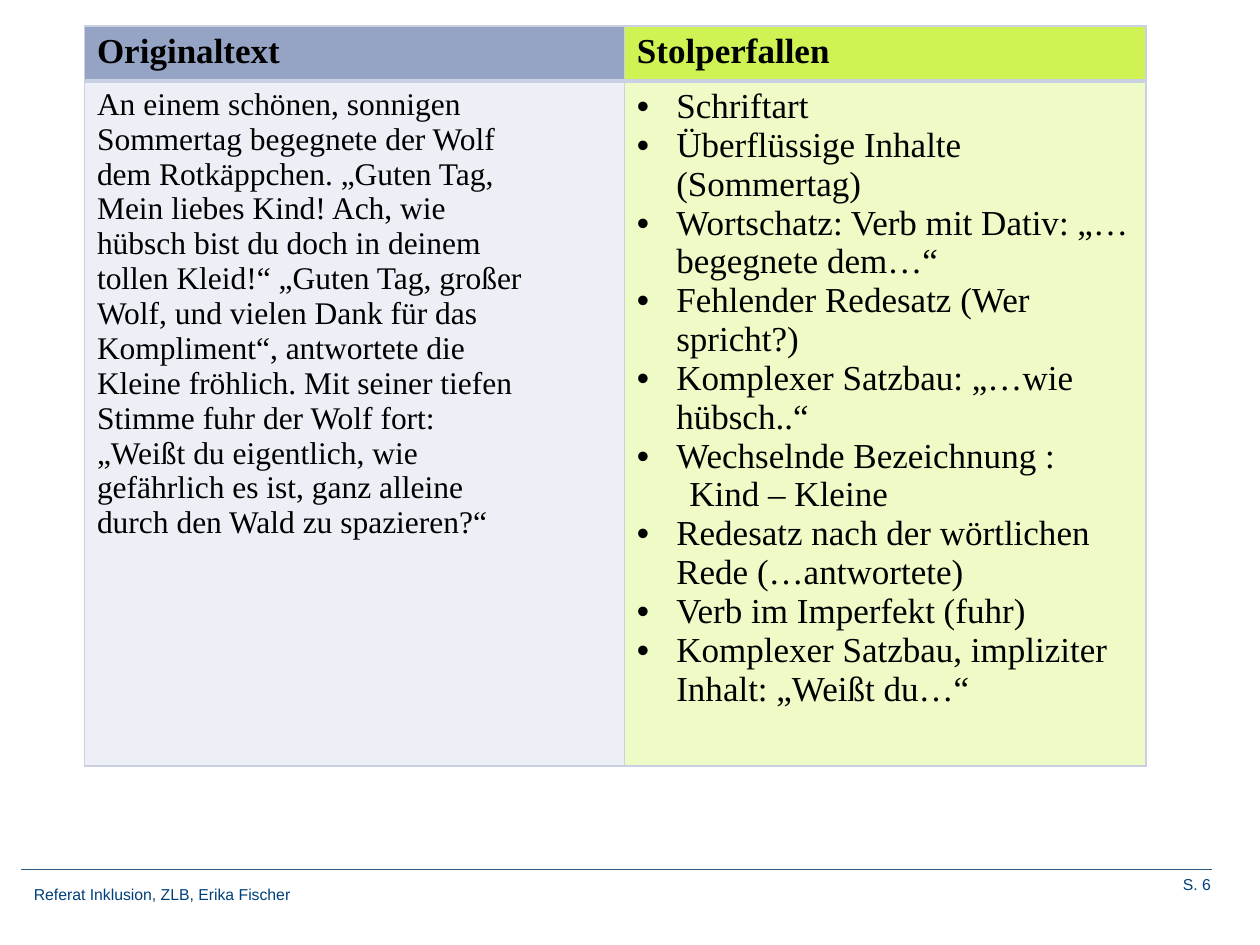
from pptx import Presentation
from pptx.dml.color import RGBColor
from pptx.enum.shapes import MSO_CONNECTOR
from pptx.enum.text import PP_ALIGN
from pptx.oxml.ns import qn
from pptx.util import Pt
from lxml.etree import SubElement, Element

BLACK = RGBColor(0x00, 0x00, 0x00)
FOOTER_BLUE = RGBColor(0x00, 0x40, 0x7A)
RULE_BLUE = RGBColor(0x2C, 0x58, 0x84)
BORDER = RGBColor(0xC8, 0xD0, 0xE2)
HEAD_BLUE = RGBColor(0x95, 0xA3, 0xC5)
HEAD_GREEN = RGBColor(0xCF, 0xF3, 0x53)
BODY_BLUE = RGBColor(0xEC, 0xEF, 0xF5)
BODY_GREEN = RGBColor(0xEF, 0xFB, 0xC6)

STORY = [
    "An einem schönen, sonnigen",
    "Sommertag begegnete der Wolf",
    "dem Rotkäppchen. „Guten Tag,",
    "Mein liebes Kind! Ach, wie",
    "hübsch bist du doch in deinem",
    "tollen Kleid!“ „Guten Tag, großer",
    "Wolf, und vielen Dank für das",
    "Kompliment“, antwortete die",
    "Kleine fröhlich. Mit seiner tiefen",
    "Stimme fuhr der Wolf fort:",
    "„Weißt du eigentlich, wie",
    "gefährlich es ist, ganz alleine",
    "durch den Wald zu spazieren?“",
]
EXAMPLE = "Kind – Kleine"
PITFALLS = [
    "Schriftart",
    "Überflüssige Inhalte (Sommertag)",
    "Wortschatz: Verb mit Dativ: „… begegnete dem…“",
    "Fehlender Redesatz (Wer spricht?)",
    "Komplexer Satzbau: „…wie hübsch..“",
    "Wechselnde Bezeichnung :",
    EXAMPLE,
    "Redesatz nach der wörtlichen Rede (…antwortete)",
    "Verb im Imperfekt (fuhr)",
    "Komplexer Satzbau, impliziter Inhalt: „Weißt du…“",
]
COLUMNS = [
    {"width": 308.5, "head": "Originaltext", "head_fill": HEAD_BLUE,
     "lines": STORY, "fill": BODY_BLUE, "size": 18, "bullets": False},
    {"width": 298.25, "head": "Stolperfallen", "head_fill": HEAD_GREEN,
     "lines": PITFALLS, "fill": BODY_GREEN, "size": 20, "bullets": True},
]
ROW_HEIGHTS = [31, 389]
TABLE_LEFT, TABLE_TOP = 48.25, 15
BULLET_INDENT, EXAMPLE_INDENT = 22.5, 30
FOOTERS = [
    ("Referat Inklusion, ZLB, Erika Fischer", (12.25, 502, 529, 18), PP_ALIGN.LEFT),
    ("S. 6", (615, 496.5, 84, 24), PP_ALIGN.RIGHT),
]


def indent(para, left, bullet=None):
    properties = para._p.get_or_add_pPr()
    properties.set("marL", str(Pt(left)))
    properties.set("indent", str(Pt(-left) if bullet else 0))
    if bullet:
        SubElement(properties, qn("a:buFont"), typeface="Arial")
        SubElement(properties, qn("a:buChar"), char=bullet)


def write(frame, lines, size, color=BLACK, font="Times New Roman", bold=False,
          align=PP_ALIGN.LEFT, bullets=False):
    frame.word_wrap = True
    for number, line in enumerate(lines):
        para = frame.add_paragraph() if number else frame.paragraphs[0]
        para.alignment = align
        if line == EXAMPLE:
            indent(para, EXAMPLE_INDENT)
        elif bullets:
            indent(para, BULLET_INDENT, "•")
        span = para.add_run()
        span.text = line
        span.font.name = font
        span.font.size = Pt(size)
        span.font.bold = bold
        span.font.color.rgb = color


def set_borders(cell, top=1, bottom=1):
    properties = cell._tc.get_or_add_tcPr()
    sides = [("lnL", 1), ("lnR", 1), ("lnT", top), ("lnB", bottom)]
    for position, (side, width) in enumerate(sides):
        line = Element(qn(f"a:{side}"), w=str(Pt(width)))
        fill = SubElement(line, qn("a:solidFill"))
        SubElement(fill, qn("a:srgbClr"), val=str(BORDER))
        properties.insert(position, line)


def fill_cell(cell, color):
    cell.fill.solid()
    cell.fill.fore_color.rgb = color


def add_comparison(slide):
    width = sum(column["width"] for column in COLUMNS)
    table = slide.shapes.add_table(
        2, len(COLUMNS), Pt(TABLE_LEFT), Pt(TABLE_TOP), Pt(width), Pt(sum(ROW_HEIGHTS))
    ).table
    for row, height in zip(table.rows, ROW_HEIGHTS):
        row.height = Pt(height)
    for index, column in enumerate(COLUMNS):
        table.columns[index].width = Pt(column["width"])
        head, body = table.cell(0, index), table.cell(1, index)
        fill_cell(head, column["head_fill"])
        fill_cell(body, column["fill"])
        set_borders(head, bottom=3)
        set_borders(body, top=3)
        write(head.text_frame, [column["head"]], 20, bold=True)
        write(body.text_frame, column["lines"], column["size"], bullets=column["bullets"])


def add_footer(slide):
    rule = slide.shapes.add_connector(
        MSO_CONNECTOR.STRAIGHT, Pt(12.25), Pt(496.75), Pt(692.5), Pt(496.75))
    rule.line.color.rgb = RULE_BLUE
    rule.line.width = Pt(0.75)
    SubElement(rule._element.spPr, qn("a:effectLst"))
    for text, place, align in FOOTERS:
        box = slide.shapes.add_textbox(*map(Pt, place))
        write(box.text_frame, [text], 9, color=FOOTER_BLUE, font="Arial", align=align)


def main():
    deck = Presentation()
    deck.slide_width, deck.slide_height = Pt(720), Pt(540)
    slide = deck.slides.add_slide(deck.slide_layouts[6])
    add_footer(slide)
    add_comparison(slide)
    deck.save("out.pptx")


if __name__ == "__main__":
    main()
